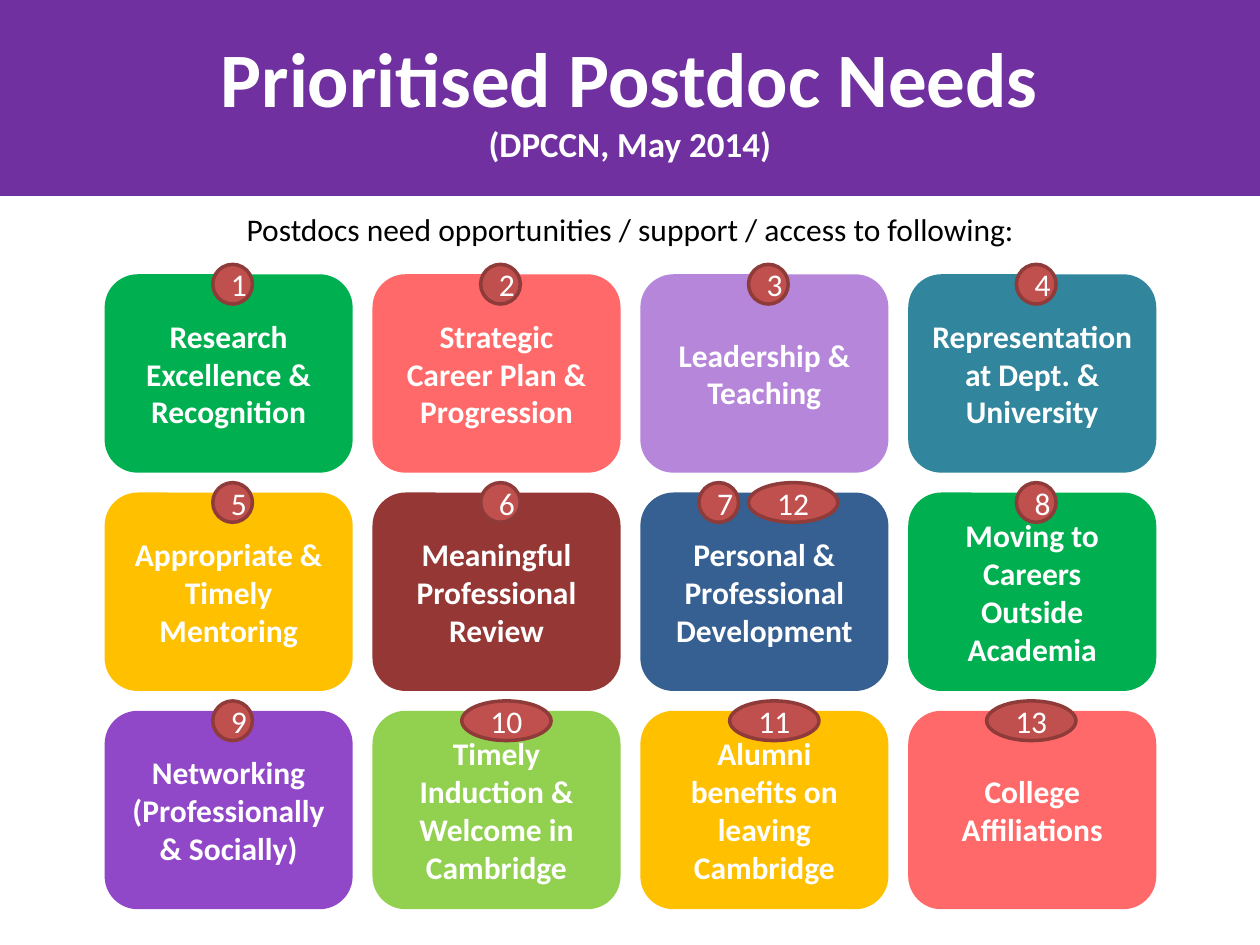
from pptx import Presentation
from pptx.dml.color import RGBColor
from pptx.enum.shapes import MSO_SHAPE as Shape
from pptx.enum.text import MSO_ANCHOR as Anchor, PP_ALIGN as Align
from pptx.util import Cm, Pt

WHITE = RGBColor(0xFF, 0xFF, 0xFF)
BLACK = RGBColor(0, 0, 0)
PURPLE = RGBColor(0x70, 0x30, 0xA0)
GREEN = RGBColor(0x00, 0xB0, 0x50)
CORAL = RGBColor(0xFF, 0x69, 0x69)
LILAC = RGBColor(0xB6, 0x86, 0xDA)
TEAL = RGBColor(0x31, 0x85, 0x9C)
AMBER = RGBColor(0xFF, 0xC0, 0x00)
MAROON = RGBColor(0x95, 0x37, 0x35)
BLUE = RGBColor(0x37, 0x60, 0x92)
VIOLET = RGBColor(0x91, 0x48, 0xC8)
LIME = RGBColor(0x92, 0xD0, 0x50)
BADGE_RED = RGBColor(0xC0, 0x50, 0x4D)
BADGE_EDGE = RGBColor(0x8E, 0x3B, 0x39)

TITLE, SUBTITLE = "Prioritised Postdoc Needs", "(DPCCN, May 2014)"
INTRO = "Postdocs need opportunities / support / access to following:"

# Each need: text, colour, and its ranks with their offset from the card's left (cm)
NEEDS = [
    [("Research Excellence & Recognition", GREEN, {1: 2.18}),
     ("Strategic Career Plan & Progression", CORAL, {2: 2.18}),
     ("Leadership & Teaching", LILAC, {3: 2.18}),
     ("Representation at Dept. & University", TEAL, {4: 2.18})],
    [("Appropriate & Timely Mentoring", AMBER, {5: 2.18}),
     ("Meaningful Professional Review", MAROON, {6: 2.18}),
     ("Personal & Professional Development", BLUE, {7: 1.18, 12: 2.18}),
     ("Moving to Careers Outside Academia", GREEN, {8: 2.18})],
    [("Networking (Professionally & Socially)", VIOLET, {9: 2.18}),
     ("Timely Induction & Welcome in Cambridge", LIME, {10: 1.8}),
     ("Alumni benefits on leaving Cambridge", AMBER, {11: 1.8}),
     ("College Affiliations", CORAL, {13: 1.58})],
]

GRID_LEFT, GRID_TOP = 2.11, 5.53
CARD_W, CARD_H, GAP = 5, 4, 0.4
BADGE_H, BADGE_RISE = 0.8, 0.2


def style_text(paragraph, size, color, bold=False):
    paragraph.alignment = Align.CENTER
    font = paragraph.font
    font.name, font.size, font.bold = "Calibri", Pt(size), bold
    font.color.rgb = color


def add_block(slide, kind, left, top, width, height, fill, text, size=18,
              bold=False, edge=None, edge_width=0.75):
    """Add a filled shape with centred white text; measures in cm."""
    block = slide.shapes.add_shape(kind, Cm(left), Cm(top), Cm(width), Cm(height))
    block.shadow.inherit = False
    block.fill.solid()
    block.fill.fore_color.rgb = fill
    if edge is None:
        block.line.fill.background()
    else:
        block.line.color.rgb = edge
        block.line.width = Pt(edge_width)
    frame = block.text_frame
    frame.word_wrap = True
    frame.vertical_anchor = Anchor.MIDDLE
    paragraph = frame.paragraphs[0]
    paragraph.add_run().text = text
    style_text(paragraph, size, WHITE, bold)
    return paragraph


def main():
    deck = Presentation()
    deck.slide_width, deck.slide_height = Cm(25.4), Cm(19.05)
    slide = deck.slides.add_slide(deck.slide_layouts[6])

    heading = add_block(slide, Shape.RECTANGLE, 0, 0, 25.4, 3.94, PURPLE,
                        TITLE, 44, True, PURPLE)
    heading.add_line_break()
    subtitle = heading.add_run()
    subtitle.text = SUBTITLE
    subtitle.font.size = Pt(20)

    intro = slide.shapes.add_textbox(Cm(GRID_LEFT), Cm(4.11), Cm(21.2), Cm(1.02)).text_frame
    intro.word_wrap = True
    intro.text = INTRO
    style_text(intro.paragraphs[0], 18, BLACK)

    for row, needs in enumerate(NEEDS):
        top = GRID_TOP + row * (CARD_H + GAP)
        for column, (need, color, ranks) in enumerate(needs):
            left = GRID_LEFT + column * (CARD_W + GAP)
            add_block(slide, Shape.ROUNDED_RECTANGLE, left, top, CARD_W, CARD_H,
                      color, need, bold=True)
            for rank, offset in ranks.items():
                badge_w = BADGE_H if rank < 10 else 1.8
                add_block(slide, Shape.OVAL, left + offset, top - BADGE_RISE,
                          badge_w, BADGE_H, BADGE_RED, str(rank),
                          edge=BADGE_EDGE, edge_width=2)

    deck.save("out.pptx")


if __name__ == "__main__":
    main()
